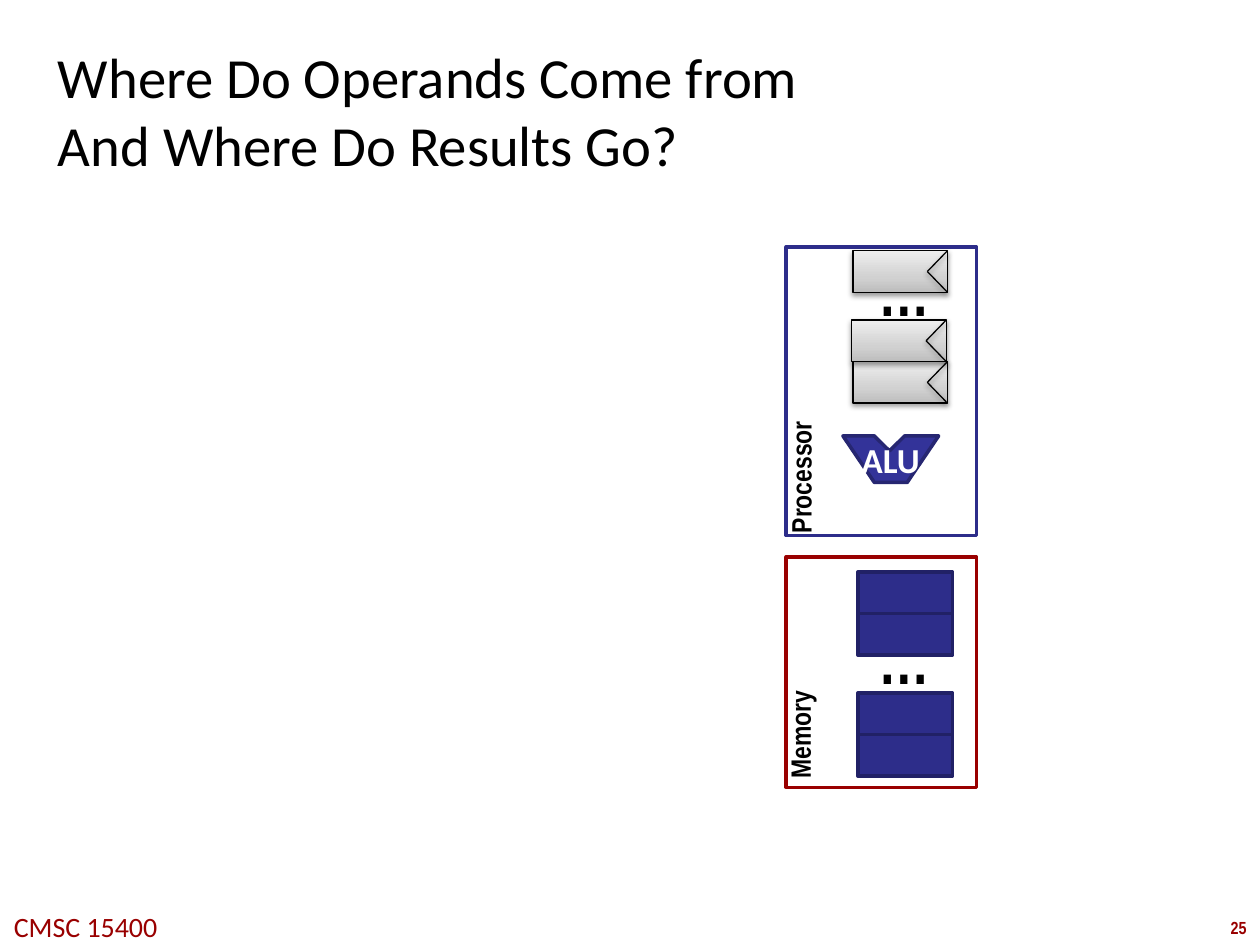
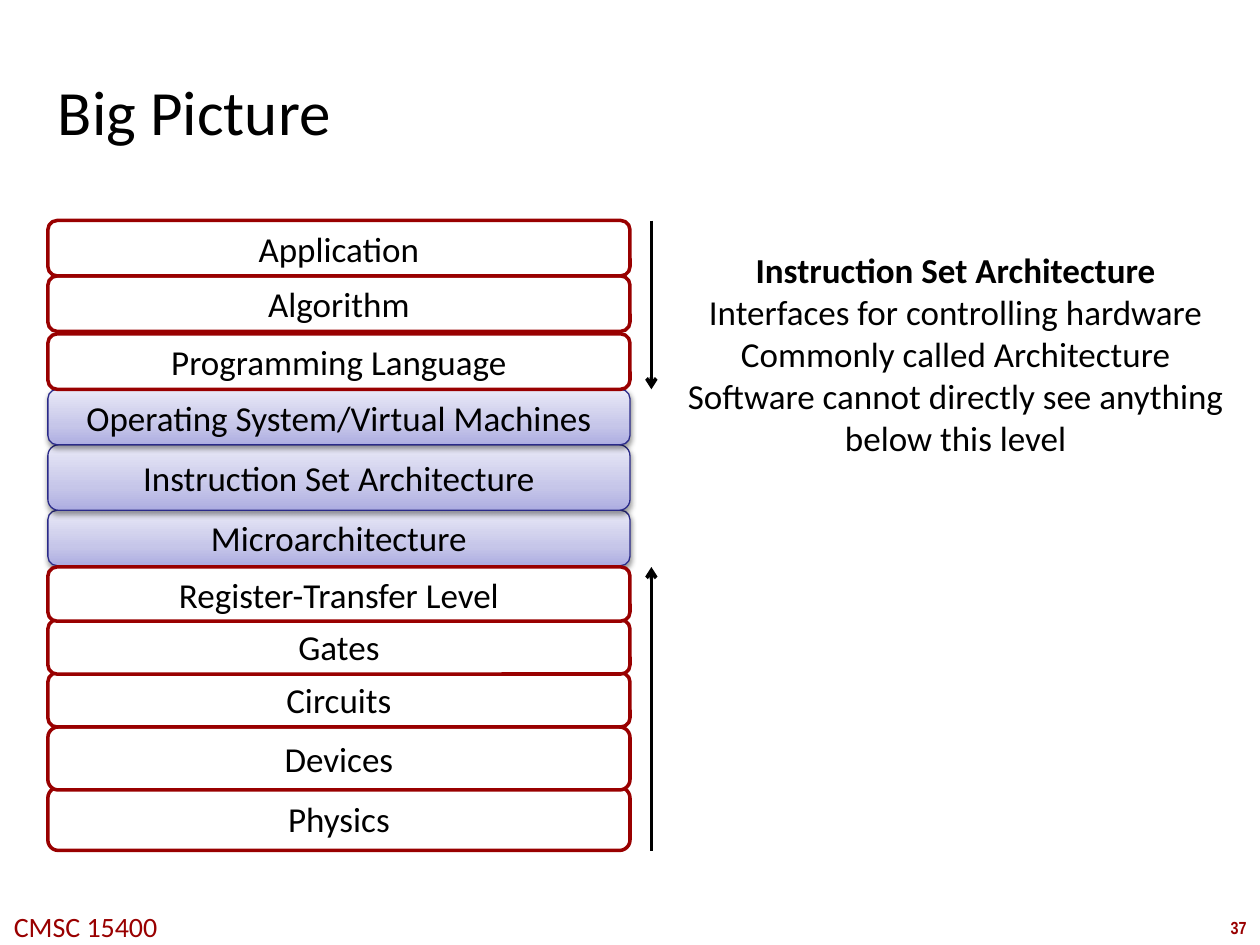
from dataclasses import dataclass

from pptx import Presentation
from pptx import oxml
from pptx import util as u
from pptx.dml.color import RGBColor
from pptx.enum import shapes as kinds, text as txt
from pptx.oxml.ns import nsdecls, qn


@dataclass(frozen=True)
class Theme:
    ink: str = "000000"
    paper: str = "FFFFFF"
    red: str = "990000"
    navy: str = "2D2D8A"
    edge: str = "212166"
    alu: str = "333399"
    rim: str = "262671"
    trim: str = "2A2A89"
    gray: tuple = ("BDBDBD", "D1D1D1", "EEEEEE")
    lilac: tuple = ("ADADE1", "C6C6E9", "E9E9F7")
    body: str = "Calibri"
    tight: str = "Arial Narrow"
    tiny: int = 10
    small: int = 16
    main: int = 20
    dots: int = 36
    thin: float = 0.75
    thick: float = 2


T = Theme()
COURSE = "CMSC 15400"

# Name, frame colour, top, height; then the label's box
UNITS = [
    ("Processor", T.navy, 1.96, 2.29, (5.81, 3.6, 1.09, 0.37)),
    ("Memory", T.red, 4.42, 1.83, (5.86, 5.6, 0.98, 0.37)),
]
REGS = [(6.77, 2.87), (6.76, 2.54), (6.77, 1.99)]
CELLS = [5.83, 5.5, 4.87, 4.54]
DOTS = [1.96, 4.88]
CELL_W, CELL_H, NOTCH = 0.75, 0.33, 0.16
ALU = [(6.69, 3.46), (6.94, 3.83), (7.2, 3.83), (7.45, 3.46),
       (7.18, 3.46), (7.06, 3.58), (6.94, 3.46)]

# Name, top, height, shaded; the first is the front one
LAYERS = [
    ("Register-Transfer Level", 4.5, 0.43, False),
    ("Application", 1.75, 0.44, False),
    ("Algorithm", 2.19, 0.44, False),
    ("Programming Language", 2.65, 0.44, False),
    ("Operating System/Virtual Machines", 3.09, 0.44, True),
    ("Instruction Set Architecture", 3.53, 0.52, True),
    ("Microarchitecture", 4.05, 0.44, True),
    ("Gates", 4.92, 0.43, False),
    ("Circuits", 5.34, 0.43, False),
    ("Devices", 5.77, 0.5, False),
    ("Physics", 6.25, 0.5, False),
]
NOTES = [
    "Instruction Set Architecture",
    "Interfaces for controlling hardware",
    "Commonly called Architecture",
    "Software cannot directly see anything below this level",
]
ARROWS = [(6.75, 4.5), (1.75, 3.09)]
ARROW_X = 5.17


def inch(*nums):
    return [u.Inches(n) for n in nums]


def write(shape, lines, size, font=T.body, color=T.ink, bold=False,
          align=txt.PP_ALIGN.CENTER, wrap=False):
    frame = shape.text_frame
    frame.word_wrap = wrap
    frame.text = "\n".join(lines)
    for para in frame.paragraphs:
        para.alignment = align
        para.font.size = u.Pt(size)
        para.font.name = font
        para.font.bold = bold
        para.font.color.rgb = RGBColor.from_string(color)
    return frame


def label(slide, box, lines, size, **style):
    """Add a text box that grows with its text."""
    shape = slide.shapes.add_textbox(*inch(*box))
    frame = write(shape, lines, size, **style)
    frame.auto_size = txt.MSO_AUTO_SIZE.SHAPE_TO_FIT_TEXT
    return shape


def shade(shape):
    """Give a shape or connector a soft shadow straight below it."""
    props = shape._element.spPr
    for old in props.findall(qn("a:effectLst")):
        props.remove(old)
    props.append(oxml.parse_xml(
        f'<a:effectLst {nsdecls("a")}><a:outerShdw blurRad="{u.Pt(3.1)}" '
        f'dist="{u.Pt(1.6)}" dir="5400000" rotWithShape="0">'
        f'<a:srgbClr val="{T.ink}"><a:alpha val="38000"/></a:srgbClr>'
        '</a:outerShdw></a:effectLst>'))


def blend(shape, colors):
    """Fill with a gradient that runs from bottom to top."""
    stops = "".join(
        f'<a:gs pos="{pos}"><a:srgbClr val="{color}"/></a:gs>'
        for pos, color in zip((0, 35000, 100000), colors))
    shape._element.spPr.find(qn("a:prstGeom")).addnext(oxml.parse_xml(
        f'<a:gradFill {nsdecls("a")} rotWithShape="1"><a:gsLst>{stops}'
        '</a:gsLst><a:lin ang="16200000" scaled="0"/></a:gradFill>'))


def paint(shape, fill, line, width):
    """Style a shape; a tuple of fill colours means a shadowed gradient."""
    shape.line.color.rgb = RGBColor.from_string(line)
    shape.line.width = u.Pt(width)
    if isinstance(fill, tuple):
        blend(shape, fill)
        shade(shape)
    else:
        shape.fill.solid()
        shape.fill.fore_color.rgb = RGBColor.from_string(fill)
        shape.shadow.inherit = False


def block(parent, box, fill, line, width=T.thick,
          kind=kinds.MSO_SHAPE.RECTANGLE):
    shape = parent.shapes.add_shape(kind, *inch(*box))
    paint(shape, fill, line, width)
    return shape


def stroke(parent, start, end, width):
    line = parent.shapes.add_connector(
        kinds.MSO_CONNECTOR.STRAIGHT, *inch(*start, *end))
    line.line.color.rgb = RGBColor.from_string(T.ink)
    line.line.width = u.Pt(width)
    line._element.spPr.append(
        oxml.parse_xml(f'<a:effectLst {nsdecls("a")}/>'))
    return line


def arrow(slide, start, end):
    line = stroke(slide, start, end, T.thick)
    line.line._get_or_add_ln().append(
        oxml.parse_xml(f'<a:tailEnd {nsdecls("a")} type="arrow"/>'))


def register(slide, left, top):
    group = slide.shapes.add_group_shape()
    block(group, (left, top, CELL_W, CELL_H), T.gray, T.ink, T.thin)
    right = left + CELL_W
    tip = (right - NOTCH, top + CELL_H / 2)
    for y in (top, top + CELL_H):
        shade(stroke(group, tip, (right, y), T.thin))


def start(deck, title, size, number):
    """Add a slide with the shared title and footer."""
    slide = deck.slides.add_slide(deck.slide_layouts[6])
    label(slide, (9.66, 7.23, 0.34, 0.27), [number], T.tiny,
          font=T.tight, color=T.red, bold=True)
    label(slide, (-0.03, 7.17, 1.42, 0.37), [COURSE], T.small, color=T.red)
    box = slide.shapes.add_textbox(*inch(0.42, 0.28, 9.17, 1.19))
    frame = write(box, [title], size, align=txt.PP_ALIGN.LEFT, wrap=True)
    frame.vertical_anchor = txt.MSO_ANCHOR.MIDDLE
    frame.margin_left = frame.margin_right = u.Inches(0.04)
    frame.margin_top = frame.margin_bottom = u.Inches(0.04)
    return slide


def operands(deck):
    slide = start(
        deck, "Where Do Operands Come from\vAnd Where Do Results Go?",
        32.4, "25")
    bold = dict(font=T.tight, bold=True, align=txt.PP_ALIGN.LEFT)
    for name, color, top, high, box in UNITS:
        block(slide, (6.24, top, 1.51, high), T.paper, color)
        label(slide, box, [name], T.small, **bold).rotation = 270
    for left, top in REGS:
        register(slide, left, top)
    for top in CELLS:
        block(slide, (6.81, top, CELL_W, CELL_H), T.navy, T.edge)
    for top in DOTS:
        label(slide, (6.87, top, 0.55, 0.71), ["…"], T.dots, **bold)

    points = [inch(*point) for point in ALU]
    path = slide.shapes.build_freeform(*points[0])
    path.add_line_segments(points[1:], close=True)
    alu = path.convert_to_shape()
    paint(alu, T.alu, T.rim, T.thick)
    frame = write(alu, ["ALU"], T.main, color=T.paper, bold=True, wrap=True)
    frame.vertical_anchor = txt.MSO_ANCHOR.MIDDLE


def layers(deck):
    slide = start(deck, "Big Picture", 36, "37")
    for name, top, high, shaded in reversed(LAYERS):
        look = (T.lilac, T.trim, T.thin) if shaded else (T.paper, T.red)
        bar = block(slide, (0.38, top, 4.62, high), *look,
                    kind=kinds.MSO_SHAPE.ROUNDED_RECTANGLE)
        frame = write(bar, [name], T.main)
        frame.vertical_anchor = txt.MSO_ANCHOR.MIDDLE
    note = label(slide, (5.17, 1.92, 4.83, 1.78), NOTES, T.main, wrap=True)
    note.text_frame.paragraphs[0].font.bold = True
    for tail, head in ARROWS:
        arrow(slide, (ARROW_X, tail), (ARROW_X, head))


def main():
    deck = Presentation()
    deck.slide_width, deck.slide_height = inch(10, 7.5)
    operands(deck)
    layers(deck)
    deck.save("out.pptx")


if __name__ == "__main__":
    main()
